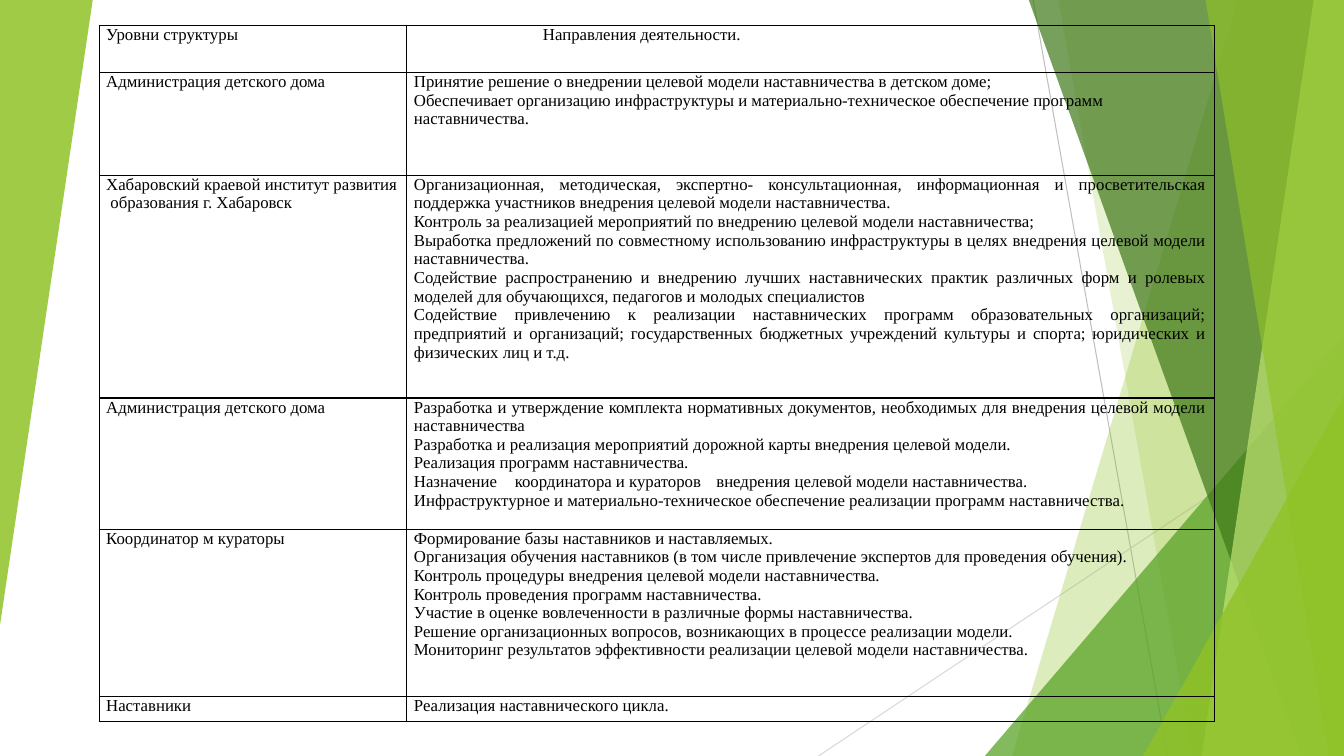
from lxml.etree import SubElement
from pptx import Presentation
from pptx.dml.color import RGBColor
from pptx.enum.shapes import MSO_CONNECTOR, MSO_SHAPE
from pptx.enum.text import PP_ALIGN
from pptx.oxml import parse_xml
from pptx.oxml.ns import nsdecls, qn
from pptx.util import Emu, Inches, Pt

COLS, ROWS = 40, 30
LEFT, JUST = PP_ALIGN.LEFT, PP_ALIGN.JUSTIFY
LIME, GREEN, DARK, PALE = "90C226", "54A021", "3F7819", "C0E474"

HEADER = ("Уровни структуры", "Направления деятельности.")
LEVELS = [
    (4.08, LEFT, "Администрация детского дома", [
        "Принятие решение о внедрении целевой модели наставничества в детском доме;",
        "Обеспечивает организацию инфраструктуры и материально-техническое обеспечение программ наставничества.",
    ]),
    (8.84, JUST, "Хабаровский краевой институт развития  образования г. Хабаровск", [
        "Организационная, методическая, экспертно- консультационная, информационная и просветительская "
        "поддержка участников внедрения целевой модели наставничества.",
        "Контроль за реализацией мероприятий по внедрению целевой модели наставничества;",
        "Выработка предложений по совместному использованию инфраструктуры в целях внедрения "
        "целевой модели наставничества.",
        "Содействие распространению и внедрению лучших наставнических практик различных форм "
        "и ролевых моделей для обучающихся, педагогов и молодых специалистов",
        "Содействие привлечению к реализации наставнических программ образовательных организаций; "
        "предприятий и организаций; государственных бюджетных учреждений культуры и спорта; "
        "юридических и физических лиц и т.д.",
    ]),
    (5.2, JUST, "Администрация детского дома", [
        "Разработка и утверждение комплекта нормативных документов, необходимых для внедрения "
        "целевой модели наставничества",
        "Разработка и реализация мероприятий дорожной карты внедрения целевой модели.",
        "Реализация программ наставничества.",
        "Назначение\tкоординатора и кураторов\tвнедрения целевой модели наставничества.",
        "Инфраструктурное и материально-техническое обеспечение реализации программ наставничества.",
    ]),
    (6.64, LEFT, "Координатор м кураторы", [
        "Формирование базы наставников и наставляемых.",
        "Организация обучения наставников (в том числе привлечение экспертов для проведения обучения).",
        "Контроль процедуры внедрения целевой модели наставничества.",
        "Контроль проведения программ наставничества.",
        "Участие в оценке вовлеченности в различные формы наставничества.",
        "Решение организационных вопросов, возникающих в процессе реализации модели.",
        "Мониторинг результатов эффективности реализации целевой модели наставничества.",
    ]),
    (1, JUST, "Наставники", ["Реализация наставнического цикла."]),
]


def color(value):
    return RGBColor.from_string(value)


class Deck:
    font, size, ink = "Times New Roman", Pt(12), "000000"

    def __init__(self):
        self.prs = Presentation()
        self.prs.slide_width, self.prs.slide_height = Inches(13.333), Inches(7.5)
        self.slide = self.prs.slides.add_slide(self.prs.slide_layouts[6])
        self.shapes = self.slide.shapes

    def x(self, col):
        return Emu(round(self.prs.slide_width * col / COLS))

    def y(self, row):
        return Emu(round(self.prs.slide_height * row / ROWS))

    def paint(self, sp, fill, alpha):
        sp.shadow.inherit = False
        sp.line.fill.background()
        sp.fill.solid()
        sp.fill.fore_color.rgb = color(fill)
        clr = sp.fill._xPr.find(qn("a:solidFill"))[0]
        SubElement(clr, qn("a:alpha"), val=str(alpha * 1000))

    def line(self, x1, y1, x2, y2, stroke):
        cn = self.shapes.add_connector(
            MSO_CONNECTOR.STRAIGHT, self.x(x1), self.y(y1), self.x(x2), self.y(y2))
        cn.line.color.rgb = color(stroke)
        cn.line.width = Pt(0.75)
        SubElement(cn._element.spPr, qn("a:effectLst"))

    def band(self, top, bottom, fill, alpha):
        corners = [(top, 0), (COLS, 0), (COLS, ROWS), (bottom, ROWS)]
        points = [(self.x(c), self.y(r)) for c, r in corners]
        fb = self.shapes.build_freeform(*points[0])
        fb.add_line_segments(points[1:], close=True)
        self.paint(fb.convert_to_shape(), fill, alpha)

    def triangle(self, col, row, width, height, fill, alpha, rotation=0):
        sp = self.shapes.add_shape(
            MSO_SHAPE.ISOSCELES_TRIANGLE, self.x(col), self.y(row), self.x(width), self.y(height))
        sp.adjustments[0] = 1
        sp.rotation = rotation
        self.paint(sp, fill, alpha)

    def cell(self, cell, lines, align=LEFT, indent=0.07):
        cell.margin_left = cell.margin_right = cell.margin_top = cell.margin_bottom = 0
        cell.fill.background()
        tcPr = cell._tc.get_or_add_tcPr()
        for i, side in enumerate("LRTB"):
            tcPr.insert(i, parse_xml(
                f'<a:ln{side} {nsdecls("a")} w="12700"><a:solidFill>'
                f'<a:srgbClr val="{self.ink}"/></a:solidFill></a:ln{side}>'))
        tf = cell.text_frame
        tf.text = "\n".join(lines)
        for p in tf.paragraphs:
            p.alignment = align
            pPr = p._p.get_or_add_pPr()
            pPr.set("marL", str(Inches(indent)))
            pPr.set("marR", str(Inches(0.08)))
            pPr.set("indent", "0")
            for r in p.runs:
                r.font.name, r.font.size = self.font, self.size
                r.font.color.rgb = color(self.ink)

    def table(self, col, row, widths, heights):
        tbl = self.shapes.add_table(
            len(heights), len(widths), self.x(col), self.y(row),
            self.x(sum(widths)), self.y(sum(heights))).table
        tbl.first_row = tbl.horz_banding = False
        for column, width in zip(tbl.columns, widths):
            column.width = self.x(width)
        for line, height in zip(tbl.rows, heights):
            line.height = self.y(height)
        return tbl


def main():
    deck = Deck()
    deck.line(30.75, 0, 34.75, 30, "BFBFBF")
    deck.line(40, 16.12, 24.36, 30, "D9D9D9")
    deck.band(36.84, 30.12, LIME, 30)
    deck.band(31.5, 35.5, LIME, 20)
    deck.triangle(29.31, 13.33, 10.69, 16.67, GREEN, 72)
    deck.band(30.62, 38.73, DARK, 70)
    deck.band(39.1, 35.76, PALE, 70)
    deck.band(35.88, 39.55, LIME, 65)
    deck.triangle(34.02, 15.73, 5.98, 14.27, LIME, 80)
    deck.triangle(0, 0, 2.76, 24.8, LIME, 85, rotation=180)

    tbl = deck.table(2.95, 1, [9.16, 24.04], [1.88] + [level[0] for level in LEVELS])
    for i, (title, indent) in enumerate(zip(HEADER, (0.07, 1.35))):
        deck.cell(tbl.cell(0, i), [title], indent=indent)
    for i, (_, align, name, duties) in enumerate(LEVELS, start=1):
        deck.cell(tbl.cell(i, 0), [name])
        deck.cell(tbl.cell(i, 1), duties, align)
    deck.prs.save("out.pptx")


if __name__ == "__main__":
    main()
